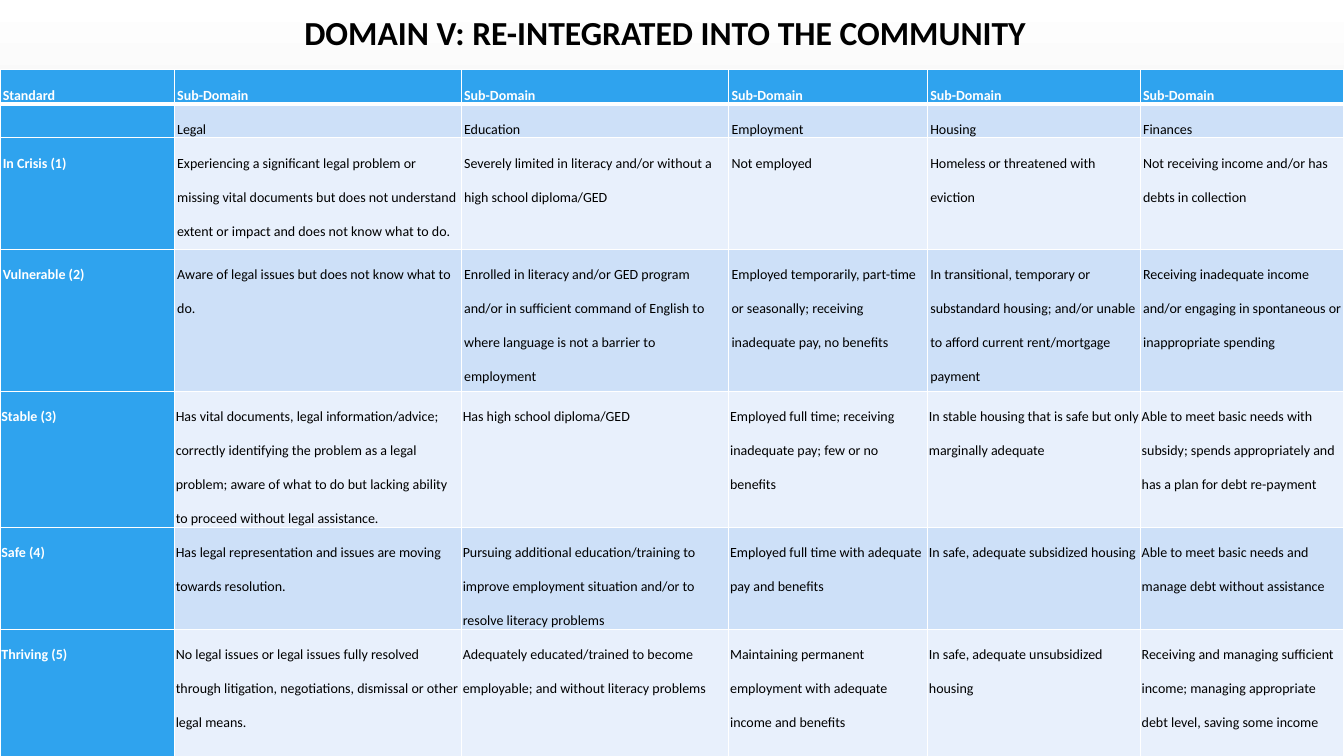
from lxml import etree
from pptx import Presentation
from pptx.dml.color import RGBColor
from pptx.enum import text
from pptx.oxml.ns import qn
from pptx.util import Pt

BLACK = RGBColor(0x00, 0x00, 0x00)
WHITE = RGBColor(0xFF, 0xFF, 0xFF)
GREY = RGBColor(0xB9, 0xB9, 0xB9)
BLUE = RGBColor(0x2F, 0xA3, 0xEE)
BAND_DARK = RGBColor(0xCD, 0xE0, 0xF8)
BAND_LIGHT = RGBColor(0xE8, 0xF0, 0xFC)
FONT = "Calibri"

WIDTH, HEIGHT = 960, 540
TITLE_BOX = (67, 0, 816, 49.7)
TABLE_BOX = (0, 49.9, WIDTH, 491.6)
COL_WIDTHS = [124.6, 205, 191, 142, 152, 145.4]
ROW_HEIGHTS = [23.9, 23.9, 79.6, 101.4, 96.8, 71.3, 94.7]
FIRST_NARROW_ROW = 4

ROWS = [
    ["Standard"] + ["Sub-Domain"] * 5,
    ["", "Legal", "Education", "Employment", "Housing", "Finances"],
    ["In Crisis (1)",
     "Experiencing a significant legal problem or missing vital documents but does not "
     "understand extent or impact and does not know what to do.",
     "Severely limited in literacy and/or without a high school diploma/GED",
     "Not employed",
     "Homeless or threatened with eviction",
     "Not receiving income and/or has debts in collection"],
    ["Vulnerable (2)",
     "Aware of legal issues but does not know what to do.",
     "Enrolled in literacy and/or GED program and/or in sufficient command of English to "
     "where language is not a barrier to employment",
     "Employed temporarily, part-time or seasonally; receiving inadequate pay, no benefits",
     "In transitional, temporary or substandard housing; and/or unable to afford current "
     "rent/mortgage payment",
     "Receiving inadequate income and/or engaging in spontaneous or inappropriate spending"],
    ["Stable (3)",
     "Has vital documents, legal information/advice; correctly identifying the problem as a "
     "legal problem; aware of what to do but lacking ability to proceed without legal "
     "assistance.",
     "Has high school diploma/GED",
     "Employed full time; receiving inadequate pay; few or no benefits",
     "In stable housing that is safe but only marginally adequate",
     "Able to meet basic needs with subsidy; spends appropriately and has a plan for debt "
     "re-payment"],
    ["Safe (4)",
     "Has legal representation and issues are moving towards resolution.",
     "Pursuing additional education/training to improve employment situation and/or to "
     "resolve literacy problems",
     "Employed full time with adequate pay and benefits",
     "In safe, adequate subsidized housing",
     "Able to meet basic needs and manage debt without assistance"],
    ["Thriving (5)",
     "No legal issues or legal issues fully resolved through litigation, negotiations, "
     "dismissal or other legal means.",
     "Adequately educated/trained to become employable; and without literacy problems",
     "Maintaining permanent employment with adequate income and benefits",
     "In safe, adequate unsubsidized housing",
     "Receiving and managing sufficient income; managing appropriate debt level, saving "
     "some income"],
]


def set_font(p, size, color, bold):
    p.font.name = FONT
    p.font.size = Pt(size)
    p.font.bold = bold
    p.font.color.rgb = color


def set_borders(cell, top, bottom):
    """Draw white borders; the side ones are 1 pt wide."""
    tcPr = cell._tc.get_or_add_tcPr()
    widths = {"a:lnL": 1, "a:lnR": 1, "a:lnT": top, "a:lnB": bottom}
    for i, (tag, width) in enumerate(widths.items()):
        ln = etree.Element(qn(tag), w=str(Pt(width)))
        fill = etree.SubElement(ln, qn("a:solidFill"))
        etree.SubElement(fill, qn("a:srgbClr"), val=str(WHITE))
        tcPr.insert(i, ln)


def fill_background(slide):
    fill = slide.background.fill
    fill.gradient()
    fill.gradient_angle = 270
    for stop, color, position in zip(fill.gradient_stops, (WHITE, GREY), (0, 1)):
        stop.color.rgb = color
        stop.position = position


def add_title(slide, box):
    tf = slide.shapes.add_textbox(*map(Pt, box)).text_frame
    tf.word_wrap = True
    tf.vertical_anchor = text.MSO_ANCHOR.MIDDLE
    p = tf.paragraphs[0]
    p.text = "DOMAIN V: RE-INTEGRATED INTO THE COMMUNITY"
    p.alignment = text.PP_ALIGN.CENTER
    p.line_spacing = 0.9
    set_font(p, 24, BLACK, True)


def style_cell(cell, row, col, content):
    is_heading = row == 0 or col == 0
    cell.fill.solid()
    cell.fill.fore_color.rgb = BLUE if is_heading else BAND_DARK if row % 2 else BAND_LIGHT
    set_borders(cell, top=3 if row == 1 else 1, bottom=3 if row == 0 else 1)
    cell.margin_left = cell.margin_right = Pt(1 if row >= FIRST_NARROW_ROW else 2)
    cell.margin_top = cell.margin_bottom = 0
    p = cell.text_frame.paragraphs[0]
    if content:
        p.text = content
        p.line_spacing = 2.0
    set_font(p, 10, WHITE if is_heading else BLACK, is_heading)


def add_standards_table(slide, box):
    frame = slide.shapes.add_table(len(ROWS), len(COL_WIDTHS), *map(Pt, box))
    table = frame.table
    table.first_row = table.horz_banding = False
    for column, width in zip(table.columns, COL_WIDTHS):
        column.width = Pt(width)
    for row, height in zip(table.rows, ROW_HEIGHTS):
        row.height = Pt(height)
    for r, contents in enumerate(ROWS):
        for c, content in enumerate(contents):
            style_cell(table.cell(r, c), r, c, content)


def main():
    prs = Presentation()
    prs.slide_width, prs.slide_height = Pt(WIDTH), Pt(HEIGHT)
    slide = prs.slides.add_slide(prs.slide_layouts[6])
    fill_background(slide)
    add_standards_table(slide, TABLE_BOX)
    add_title(slide, TITLE_BOX)
    prs.save("out.pptx")


if __name__ == "__main__":
    main()
